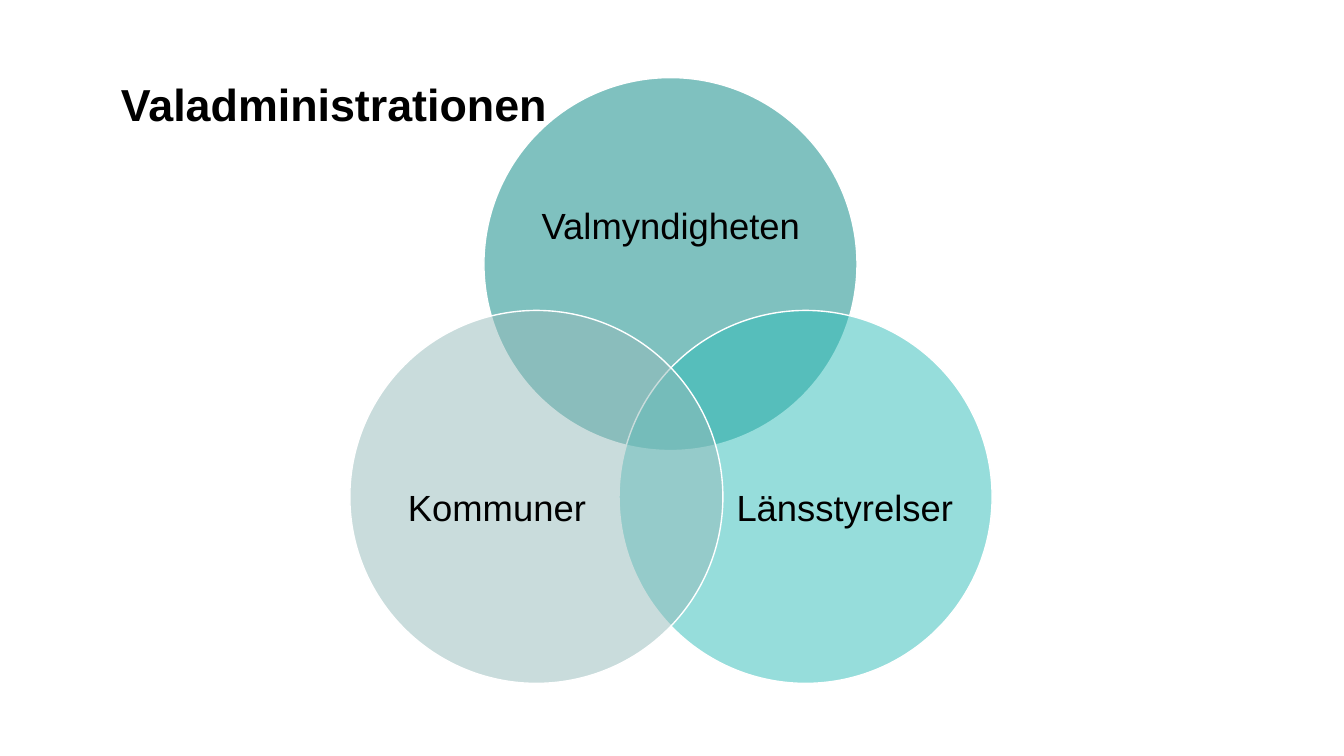
from lxml.etree import SubElement
from pptx import Presentation
from pptx.dml.color import RGBColor
from pptx.enum.shapes import MSO_SHAPE as Shape
from pptx.enum.text import MSO_ANCHOR as Anchor, MSO_AUTO_SIZE as Fit, PP_ALIGN as Align
from pptx.oxml.ns import qn
from pptx.util import Inches, Pt


def color(code):
    return RGBColor.from_string(code)


def place(shape, box):
    shape.left, shape.top, shape.width, shape.height = map(Inches, box)


class Venn:
    font = "Arial"
    ink = "000000"
    edge = "FFFFFF"
    size = 3.7

    def __init__(self, slide):
        self.slide = slide
        self.group = slide.shapes.add_group_shape()

    def add_text(self, frame, text, size, align, anchor, bold=False):
        frame.word_wrap = True
        frame.auto_size = Fit.NONE
        frame.vertical_anchor = anchor
        para = frame.paragraphs[0]
        para.alignment = align
        para.line_spacing = 0.9
        run = para.add_run()
        run.text = text
        run.font.name = self.font
        run.font.size = Pt(size)
        run.font.bold = bold
        run.font.color.rgb = color(self.ink)

    def title(self, text, box):
        title = self.slide.shapes.title
        place(title, box)
        self.add_text(title.text_frame, text, 32, Align.LEFT, Anchor.BOTTOM, True)

    def circle(self, left, top, fill):
        box = map(Inches, (left, top, self.size, self.size))
        disc = self.group.shapes.add_shape(Shape.OVAL, *box)
        disc.shadow.inherit = False
        disc.fill.solid()
        disc.fill.fore_color.rgb = color(fill)
        tint = disc.element.spPr.find(qn("a:solidFill"))[0]
        SubElement(tint, qn("a:alpha"), val="50000")
        disc.line.color.rgb = color(self.edge)
        disc.line.width = Pt(1)

    def label(self, text, box):
        frame = self.group.shapes.add_textbox(*map(Inches, box)).text_frame
        frame.margin_left = frame.margin_right = 0
        frame.margin_top = frame.margin_bottom = 0
        self.add_text(frame, text, 26, Align.CENTER, Anchor.MIDDLE)


def main():
    deck = Presentation()
    deck.slide_width, deck.slide_height = Inches(13.33), Inches(7.5)
    venn = Venn(deck.slides.add_slide(deck.slide_layouts[5]))
    venn.title("Valadministrationen", (1.1, 0.56, 11.13, 0.79))
    parts = [
        ("Valmyndigheten", "008481", (4.8, 0.77), (5.3, 1.42, 2.71, 1.67)),
        ("Länsstyrelser", "2EBDB8", (6.14, 3.08), (7.27, 4.04, 2.22, 2.04)),
        ("Kommuner", "95BBBA", (3.47, 3.08), (3.82, 4.04, 2.22, 2.04)),
    ]
    for name, fill, spot, box in parts:
        venn.circle(*spot, fill)
        venn.label(name, box)
    deck.save("out.pptx")


if __name__ == "__main__":
    main()
